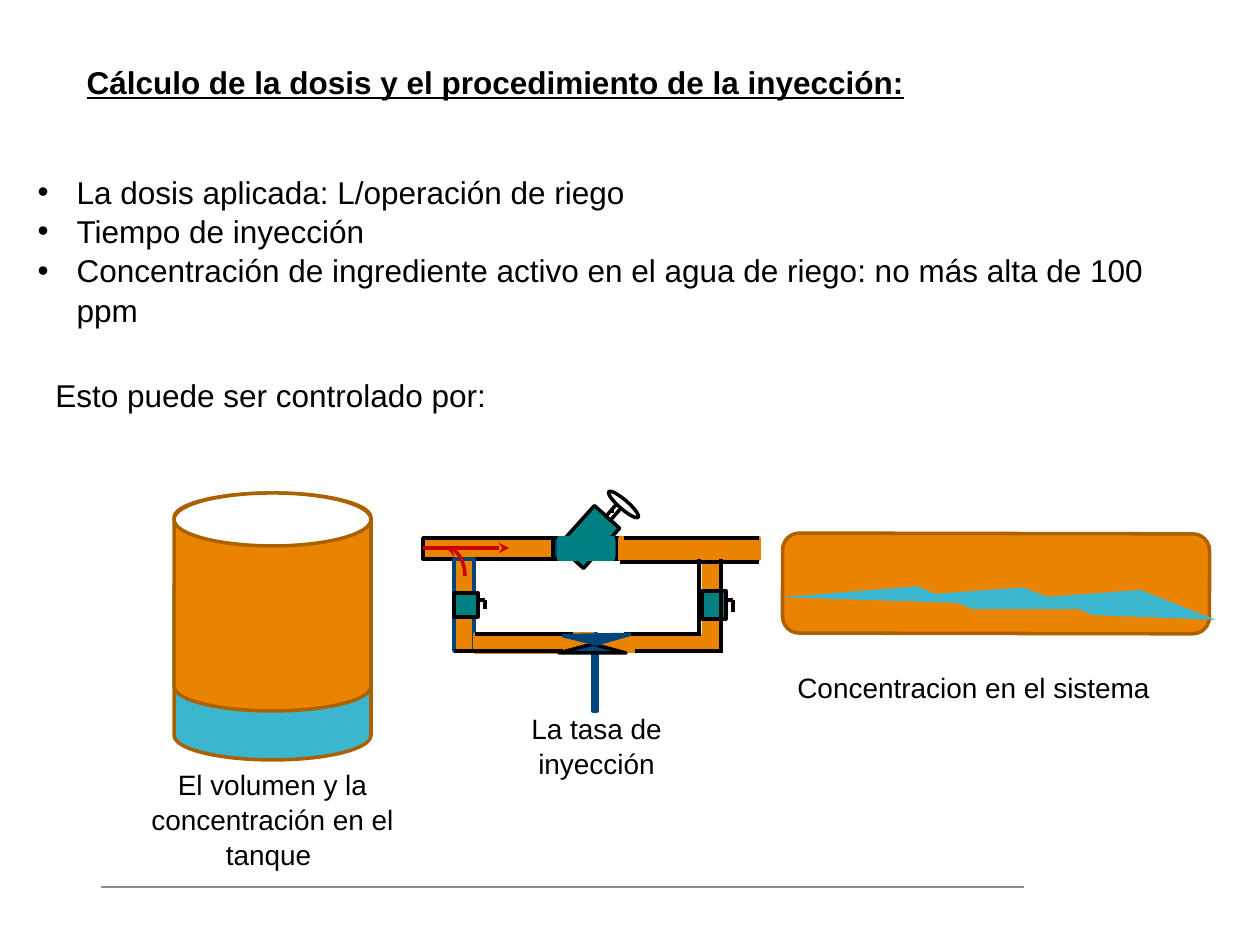
from dataclasses import dataclass

from pptx import Presentation
from pptx.dml.color import RGBColor
from pptx.enum.shapes import MSO_CONNECTOR, MSO_SHAPE as S
from pptx.enum.text import MSO_ANCHOR, MSO_AUTO_SIZE, PP_ALIGN
from pptx.oxml.ns import qn
from pptx.util import Pt
from lxml.etree import SubElement

PX = 914400 / 126


@dataclass(frozen=True)
class Theme:
    font: str = "Arial"
    body_size: int = 18
    caption_size: int = 16
    line_spacing: float = 1.04
    stroke: float = 2
    hairline: float = 0.75
    black: str = "000000"
    white: str = "FFFFFF"
    grey: str = "8C8C8C"
    orange: str = "E98300"
    brown: str = "AC6100"
    water: str = "3CB6CE"
    teal: str = "008080"
    navy: str = "00457C"
    cyan: str = "66FFFF"
    red: str = "CC0000"


T = Theme()

TITLE = "Cálculo de la dosis y el procedimiento de la inyección:"
TITLE_BOX = (74, 55, 883, 50)
BULLETS = [
    "La dosis aplicada: L/operación de riego",
    "Tiempo de inyección",
    "Concentración de ingrediente activo en el agua de riego: no más alta de 100 ppm",
]
BULLETS_BOX = (25, 165, 1181, 127)
BULLET_INDENT = 39

# text, box, size, alignment
LABELS = [
    ("Esto puede ser controlado por:", (43, 368, 1011, 50), T.body_size, PP_ALIGN.LEFT),
    ("Concentracion en el sistema", (785, 663, 426, 81), T.caption_size, PP_ALIGN.LEFT),
    ("La tasa de inyección", (459, 704, 275, 47), T.caption_size, PP_ALIGN.CENTER),
    ("El volumen y la concentración en el tanque ", (115, 760, 315, 115),
     T.caption_size, PP_ALIGN.CENTER),
]

FOOTER_RULE = (101, 887, 1024, 887)

# Shapes: preset, box, fill, outline, rotation. Lines: None, ends, colour.
TANK = [
    (S.CAN, (174, 562, 197, 198), T.water, T.brown, 0),
    (S.CAN, (174, 493, 197, 218), T.orange, T.brown, 0),
    (S.OVAL, (174, 493, 197, 53), T.white, T.brown, 0),
]
INJECTOR = [
    # pipes and main valve
    (S.RECTANGLE, (593, 634, 127, 19), T.orange, None, 0),
    (S.RECTANGLE, (572, 510, 34, 54), T.teal, T.black, 42),
    (S.RECTANGLE, (612, 500, 6, 21), T.white, T.black, 41),
    (S.RECTANGLE, (588, 538, 169, 21), None, T.navy, 0),
    (S.RECTANGLE, (423, 538, 164, 21), T.orange, T.black, 0),
    (S.RECTANGLE, (454, 559, 20, 92), T.orange, T.navy, 0),
    (S.RECTANGLE, (475, 634, 84, 18), T.orange, T.orange, 0),
    (S.RECTANGLE, (702, 559, 20, 92), T.orange, None, 0),
    (S.RECTANGLE, (553, 538, 6, 21), T.navy, T.black, 0),
    (S.RECTANGLE, (612, 538, 6, 21), T.navy, T.black, 0),
    (S.RECTANGLE, (557, 634, 6, 18), T.white, T.black, 0),
    (S.RECTANGLE, (593, 634, 4, 77), T.cyan, T.navy, 0),
    (None, (612, 513, 612, 510), T.black),
    (S.RECTANGLE, (559, 538, 28, 21), T.teal, T.teal, 0),
    (S.RECTANGLE, (585, 538, 28, 21), T.teal, T.teal, 0),
    (S.OVAL, (619, 485, 9, 39), T.white, T.black, 311),
    (None, (475, 634, 567, 634), T.black),
    (None, (624, 634, 701, 634), T.black),
    (None, (635, 651, 719, 651), T.black),
    # flow arrows
    (None, (423, 548, 509, 548), T.red, "tailEnd"),
    (S.ARC, (429, 548, 36, 56), None, T.red, 0, "headEnd"),
    # outlet pipe
    (S.RECTANGLE, (620, 538, 139, 21), T.orange, T.orange, 0),
    (None, (624, 538, 759, 538), T.black),
    (None, (620, 562, 759, 562), T.black),
    # side valves with handles
    (S.RECTANGLE, (454, 593, 24, 24), T.teal, T.black, 0),
    (S.RECTANGLE, (702, 591, 24, 28), T.teal, T.black, 0),
    (None, (479, 600, 485, 600), T.black),
    (None, (485, 600, 485, 609), T.black),
    (None, (726, 600, 733, 600), T.black),
    (None, (733, 600, 733, 612), T.black),
    # bypass walls and venturi
    (S.RECTANGLE, (553, 634, 40, 18), T.orange, T.orange, 0),
    (None, (483, 634, 573, 634), T.black),
    (None, (454, 651, 563, 651), T.black),
    (None, (721, 653, 721, 559), T.black),
    (None, (699, 634, 699, 559), T.black),
    (None, (627, 634, 701, 634), T.black),
    (S.ISOSCELES_TRIANGLE, (559, 644, 67, 9), T.navy, T.black, 0),
    (S.ISOSCELES_TRIANGLE, (563, 635, 67, 9), T.navy, T.navy, 179),
]
SYSTEM = [
    (S.ROUNDED_RECTANGLE, (946, 370, 100, 427), T.orange, T.brown, 90.1),
    (S.LIGHTNING_BOLT, (973, 381, 52, 435), T.water, None, 97.1),
]


def emu(box):
    return [round(value * PX) for value in box]


def set_line(shape, color, width=T.stroke, arrow=None):
    if color is None:
        shape.line.fill.background()
        return
    shape.line.color.rgb = RGBColor.from_string(color)
    shape.line.width = Pt(width)
    if arrow:
        SubElement(shape.line._get_or_add_ln(), qn(f"a:{arrow}"), type="stealth")


def add_line(slide, ends, color, arrow=None, width=T.stroke):
    line = slide.shapes.add_connector(MSO_CONNECTOR.STRAIGHT, *emu(ends))
    set_line(line, color, width, arrow)
    SubElement(line._element.spPr, qn("a:effectLst"))


def add_preset(slide, preset, box, fill, outline, rotation, arrow=None):
    shape = slide.shapes.add_shape(preset, *emu(box))
    shape.rotation = rotation
    if fill:
        shape.fill.solid()
        shape.fill.fore_color.rgb = RGBColor.from_string(fill)
    else:
        shape.fill.background()
    set_line(shape, outline, arrow=arrow)
    shape.shadow.inherit = False


def draw(slide, parts):
    for preset, *details in parts:
        if preset is None:
            add_line(slide, *details)
        else:
            add_preset(slide, preset, *details)


def write(shape, box, texts, size, align=PP_ALIGN.LEFT, bold=False, bullet=False):
    shape.left, shape.top, shape.width, shape.height = emu(box)
    frame = shape.text_frame
    frame.word_wrap = True
    frame.auto_size = MSO_AUTO_SIZE.NONE
    frame.vertical_anchor = MSO_ANCHOR.TOP
    for index, text in enumerate(texts):
        paragraph = frame.add_paragraph() if index else frame.paragraphs[0]
        paragraph.alignment = align
        paragraph.line_spacing = T.line_spacing
        paragraph.space_before = Pt(0)
        if bullet:
            properties = paragraph._p.get_or_add_pPr()
            indent = round(BULLET_INDENT * PX)
            properties.set("marL", str(indent))
            properties.set("indent", str(-indent))
            SubElement(properties, qn("a:buFont"), typeface=T.font)
            SubElement(properties, qn("a:buChar"), char="•")
        run = paragraph.add_run()
        run.text = text
        run.font.name = T.font
        run.font.size = Pt(size)
        run.font.bold = run.font.underline = bold
        run.font.color.rgb = RGBColor.from_string(T.black)


def main():
    presentation = Presentation()
    presentation.slide_width, presentation.slide_height = emu((1260, 945))
    slide = presentation.slides.add_slide(presentation.slide_layouts[1])
    add_line(slide, FOOTER_RULE, T.grey, width=T.hairline)
    write(slide.shapes.title, TITLE_BOX, [TITLE], T.body_size, bold=True)
    write(slide.placeholders[1], BULLETS_BOX, BULLETS, T.body_size, bullet=True)
    draw(slide, TANK + INJECTOR + SYSTEM)
    for text, box, size, align in LABELS:
        write(slide.shapes.add_textbox(*emu(box)), box, [text], size, align)
    presentation.save("out.pptx")


if __name__ == "__main__":
    main()
